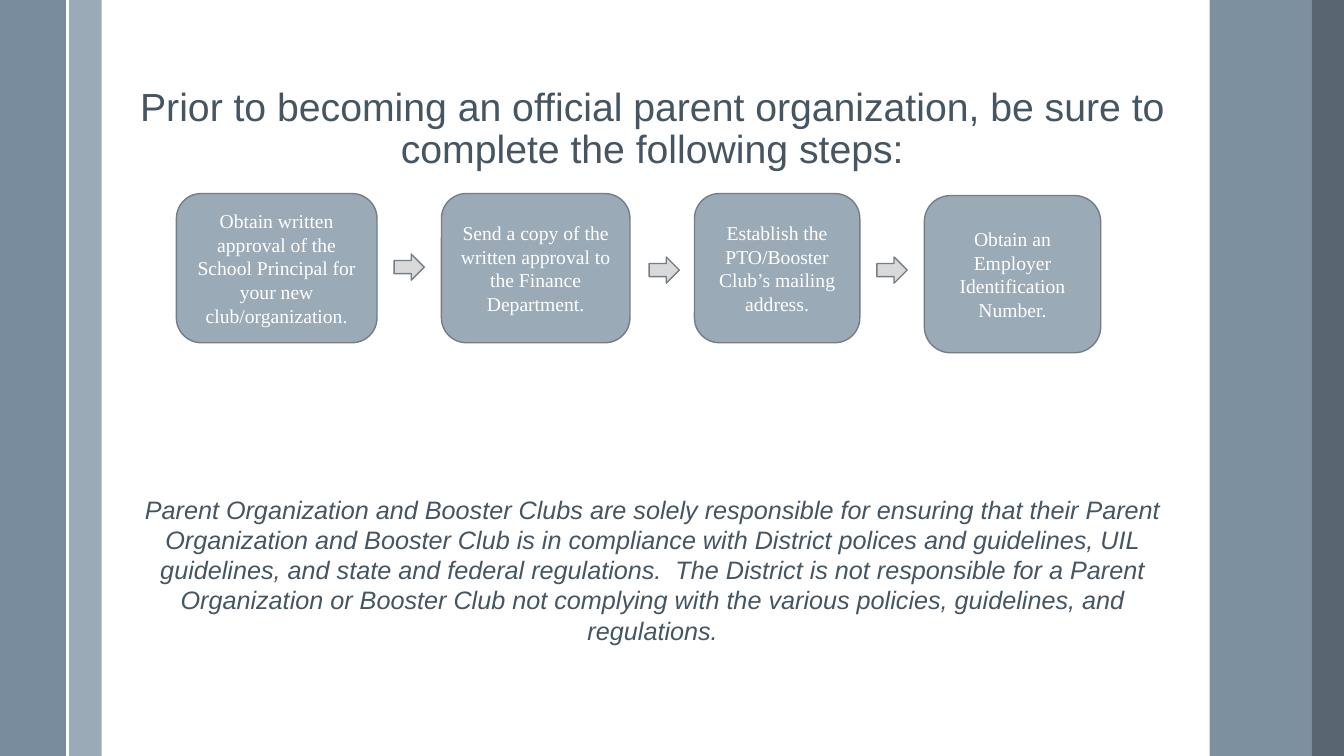
import dataclasses
import pptx
import pptx.util
import pptx.dml.color
import pptx.enum.shapes
import pptx.enum.text
import pptx.oxml
import pptx.oxml.ns

SHAPE = pptx.enum.shapes.MSO_SHAPE
ANCHOR = pptx.enum.text.MSO_ANCHOR
FIT = pptx.enum.text.MSO_AUTO_SIZE
CELL = pptx.util.Inches(1) / 12
COLS, ROWS = 160, 90


@dataclasses.dataclass(frozen=True)
class Theme:
    """Hold the colours, fonts and type sizes."""
    pale: str = "9BAAB7"
    slate: str = "6A8093"
    dark: str = "475562"
    ink: str = "465562"
    edge: str = "737E87"
    grey: str = "D9D9D9"
    white: str = "FFFFFF"
    sans: str = "Arial"
    serif: str = "Times New Roman"
    head: int = 28
    body: int = 18
    small: int = 14


THEME = Theme()
TITLE = ("Prior to becoming an official parent organization, "
         "be sure to complete the following steps:")
NOTE = ("Parent Organization and Booster Clubs are solely responsible for "
        "ensuring that their Parent Organization and Booster Club is in "
        "compliance with District polices and guidelines, UIL guidelines, and "
        "state and federal regulations.  The District is not responsible for a "
        "Parent Organization or Booster Club not complying with the various "
        "policies, guidelines, and regulations.")
BANDS = [(8.16, 3.96, THEME.pale, 100), (0, 8.04, THEME.slate, 90),
         (144, 12.12, THEME.slate, 87), (156.12, 3.88, THEME.dark, 90)]
STEPS = [
    (0, 0, 23.88, 17.76, "Obtain written approval of the School Principal "
                         "for your new club/organization."),
    (31.56, 0, 22.44, 17.76, "Send a copy of the written approval to the "
                             "Finance Department."),
    (61.68, 0, 19.68, 17.76, "Establish the PTO/Booster Club’s mailing address."),
    (89.04, 0.24, 21, 18.72, "Obtain an Employer Identification Number."),
]
ARROWS = [(25.92, 7.2), (56.28, 7.56), (83.4, 7.56)]


def span(*cells):
    """Turn grid cells into slide lengths."""
    return [round(n * CELL) for n in cells]


def tint(code):
    """Give the colour for a hex code."""
    return pptx.dml.color.RGBColor.from_string(code)


def block(slide, kind, box, fill, edge=None, alpha=100):
    """Add a filled shape, with an edge if one is named."""
    shape = slide.shapes.add_shape(kind, *span(*box))
    shape.shadow.inherit = False
    shape.fill.solid()
    shape.fill.fore_color.rgb = tint(fill)
    if alpha < 100:
        color = shape.fill._xPr.find(".//" + pptx.oxml.ns.qn("a:srgbClr"))
        node = pptx.oxml.parse_xml(
            f'<a:alpha {pptx.oxml.ns.nsdecls("a")} val="{alpha * 1000}"/>')
        color.append(node)
    if edge:
        shape.line.color.rgb = tint(edge)
        shape.line.width = pptx.util.Pt(1)
    else:
        shape.line.fill.background()
    return shape


def write(shape, text, size, face, color, anchor, slant=False):
    """Write one centred run into a shape."""
    frame = shape.text_frame
    frame.word_wrap = True
    frame.auto_size = FIT.NONE
    frame.vertical_anchor = anchor
    para = frame.paragraphs[0]
    para.alignment = pptx.enum.text.PP_ALIGN.CENTER
    run = para.add_run()
    run.text = text
    run.font.size = pptx.util.Pt(size)
    run.font.name = face
    run.font.italic = slant
    run.font.color.rgb = tint(color)
    return para


def frame(slide, box):
    """Draw the side bands and the white rule."""
    left, top, _, high = box
    for x, wide, fill, alpha in BANDS:
        block(slide, SHAPE.RECTANGLE, (left + x, top, wide, high), fill,
              alpha=alpha)
    x = left + 8.04
    rule = slide.shapes.add_connector(
        pptx.enum.shapes.MSO_CONNECTOR.STRAIGHT, *span(x, top, x, top + high))
    rule.line.color.rgb = tint(THEME.white)
    rule.line.width = pptx.util.Pt(1.5)
    rule._element.spPr.append(pptx.oxml.parse_xml(
        f'<a:effectLst {pptx.oxml.ns.nsdecls("a")}/>'))


def title(slide, box):
    """Place and fill the title."""
    head = slide.shapes.title
    head.left, head.top, head.width, head.height = span(*box)
    para = write(head, TITLE, THEME.head, THEME.sans, THEME.ink, ANCHOR.TOP)
    para.line_spacing = 0.9


def flow(slide, box):
    """Draw the steps and the arrows between them."""
    left, top = box[:2]
    for x, y, wide, high, text in STEPS:
        card = block(slide, SHAPE.ROUNDED_RECTANGLE,
                     (left + x, top + y, wide, high), THEME.pale, THEME.edge)
        write(card, text, THEME.small, THEME.serif, THEME.white, ANCHOR.MIDDLE)
    for x, y in ARROWS:
        block(slide, SHAPE.RIGHT_ARROW, (left + x, top + y, 3.6, 3.12),
              THEME.grey, THEME.edge)


def note(slide, box):
    """Add the closing statement."""
    area = slide.shapes.add_textbox(*span(*box))
    write(area, NOTE, THEME.body, THEME.sans, THEME.ink, ANCHOR.TOP, True)


def main():
    """Build and save the slide."""
    deck = pptx.Presentation()
    deck.slide_width, deck.slide_height = span(COLS, ROWS)
    slide = deck.slides.add_slide(deck.slide_layouts[5])
    frame(slide, (0, 0, COLS, ROWS))
    title(slide, (13.44, 9.84, 128.4, 12))
    flow(slide, (21, 23.04, 110.04, 18.96))
    note(slide, (15.12, 58.2, 125.16, 19.44))
    deck.save("out.pptx")


if __name__ == "__main__":
    main()
